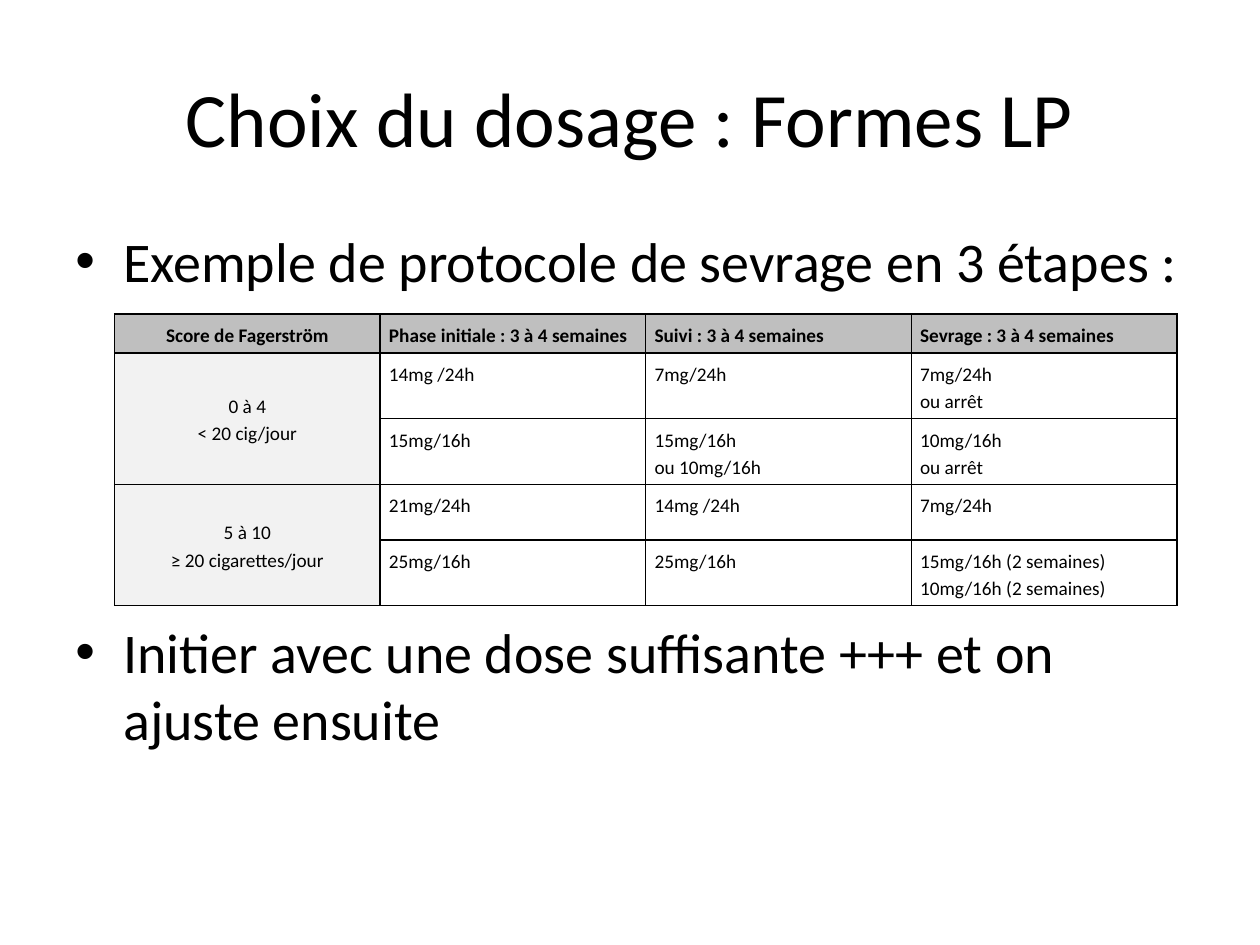
from pptx import Presentation
from pptx.dml.color import RGBColor
from pptx.enum.text import MSO_ANCHOR as Anchor, PP_ALIGN as Align
from pptx.oxml import parse_xml
from pptx.oxml.ns import nsdecls
from pptx.util import Inches, Pt

BLACK, HEAD, SIDE = "000000", "BFBFBF", "F2F2F2"
ROWS = [
    ["Score de Fagerström", "Phase initiale : 3 à 4 semaines",
     "Suivi : 3 à 4 semaines", "Sevrage : 3 à 4 semaines"],
    ["0 à 4\n< 20 cig/jour", "14mg /24h", "7mg/24h", "7mg/24h\nou arrêt"],
    ["", "15mg/16h", "15mg/16h\nou 10mg/16h", "10mg/16h\nou arrêt"],
    ["5 à 10\n≥ 20 cigarettes/jour", "21mg/24h", "14mg /24h", "7mg/24h"],
    ["", "25mg/16h", "25mg/16h", "15mg/16h (2 semaines)\n10mg/16h (2 semaines)"],
]


def color(code):
    return RGBColor.from_string(code)


class Deck:
    """Holds the style and the current slide, and adds each kind of element."""

    def __init__(self, font="Calibri"):
        self.font = font
        self.file = Presentation()
        self.file.slide_width, self.file.slide_height = Inches(10), Inches(7.5)
        self.slide = self.file.slides.add_slide(self.file.slide_layouts[6])

    def run(self, para, text, size, bold=False):
        run = para.add_run()
        run.text = text
        run.font.name, run.font.size, run.font.bold = self.font, Pt(size), bold
        run.font.color.rgb = color(BLACK)

    def box(self, left, top, width, height):
        place = [Inches(n) for n in (left, top, width, height)]
        frame = self.slide.shapes.add_textbox(*place).text_frame
        frame.word_wrap = True
        return frame

    def title(self, text):
        frame = self.box(0.5, 0.3, 9, 1.25)
        frame.vertical_anchor = Anchor.MIDDLE
        para = frame.paragraphs[0]
        para.alignment = Align.CENTER
        self.run(para, text, 44)

    def bullets(self, items):
        frame = self.box(0.5, 1.75, 9, 4.95)
        for i, (text, gap) in enumerate(items):
            para = frame.add_paragraph() if i else frame.paragraphs[0]
            para.space_before = Pt(gap)
            props = para._p.get_or_add_pPr()
            props.set("marL", str(Inches(0.38)))
            props.set("indent", str(-Inches(0.38)))
            for tag in ('buFont typeface="Arial"', 'buChar char="•"'):
                props.append(parse_xml(f"<a:{tag} {nsdecls('a')}/>"))
            self.run(para, text, 32)

    def border(self, cell):
        props = cell._tc.get_or_add_tcPr()
        for i, side in enumerate(("lnL", "lnR", "lnT", "lnB")):
            props.insert(i, parse_xml(
                f'<a:{side} {nsdecls("a")} w="{Pt(0.96)}"><a:solidFill>'
                f'<a:srgbClr val="{BLACK}"/></a:solidFill></a:{side}>'))

    def cell(self, cell, text, fill, mid, bold):
        cell.margin_left = cell.margin_right = Inches(0.07)
        cell.margin_top = cell.margin_bottom = Inches(0.05)
        if fill:
            cell.fill.solid()
            cell.fill.fore_color.rgb = color(fill)
        else:
            cell.fill.background()
        self.border(cell)
        cell.vertical_anchor = Anchor.MIDDLE if mid and not bold else Anchor.TOP
        for i, line in enumerate(text.split("\n") if text else []):
            para = cell.text_frame.add_paragraph() if i else cell.text_frame.paragraphs[0]
            para.alignment = Align.CENTER if mid else Align.LEFT
            para.line_spacing = 1.15
            self.run(para, line, 11, bold)

    def table(self, rows, left, top, width, heights):
        count = len(rows[0])
        table = self.slide.shapes.add_table(
            len(rows), count, Inches(left), Inches(top),
            Inches(width), Inches(sum(heights))).table
        table.first_row = table.horz_banding = False
        for col in table.columns:
            col.width = Inches(width / count)
        for r, texts in enumerate(rows):
            table.rows[r].height = Inches(heights[r])
            for c, text in enumerate(texts):
                fill = HEAD if r == 0 else SIDE if c == 0 else None
                self.cell(table.cell(r, c), text, fill, c == 0, r == 0)
        for r in range(1, len(rows), 2):
            table.cell(r, 0).merge(table.cell(r + 1, 0))


def main():
    deck = Deck()
    deck.title("Choix du dosage : Formes LP")
    deck.bullets([
        ("Exemple de protocole de sevrage en 3 étapes :", 6.4),
        ("Initier avec une dose suffisante +++ et on ajuste ensuite", 185),
    ])
    deck.table(ROWS, 0.91, 2.49, 8.43, [0.31] + [0.44] * 4)
    deck.file.save("out.pptx")


if __name__ == "__main__":
    main()
